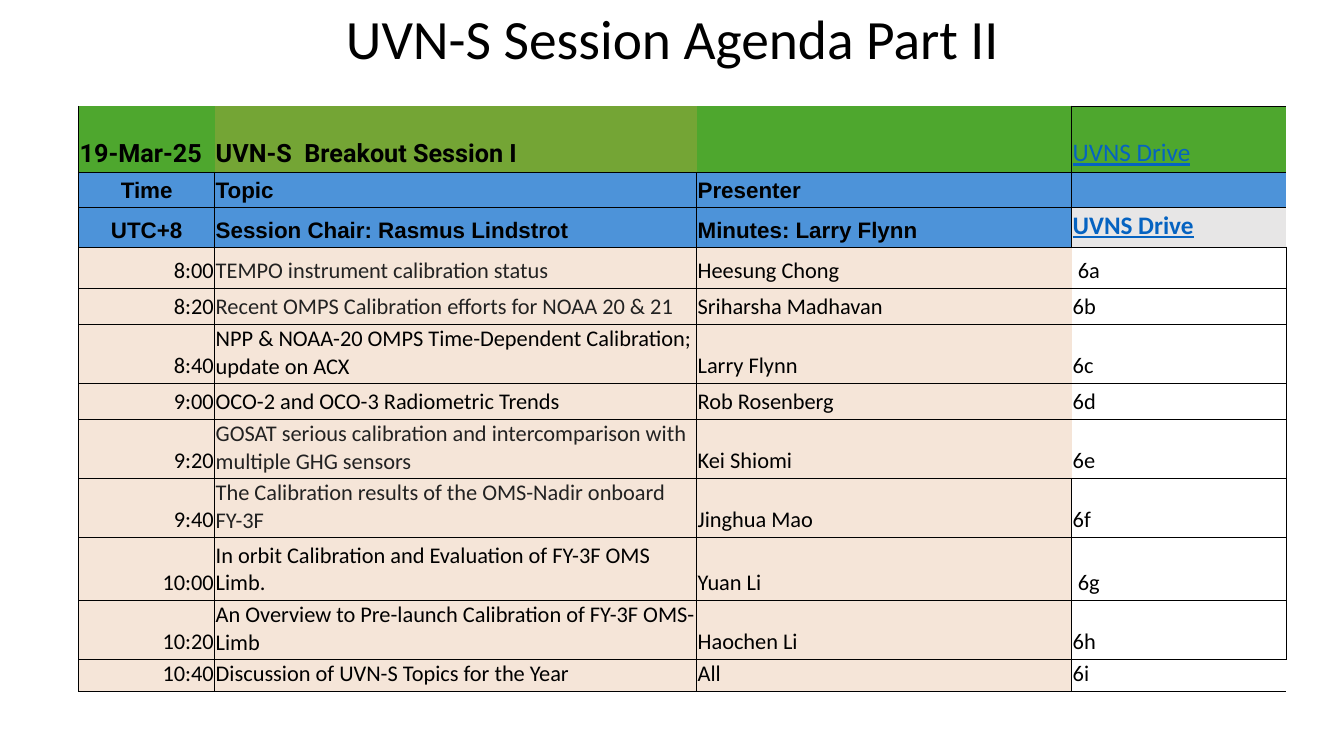
from lxml import etree
from pptx import Presentation
from pptx.dml.color import RGBColor
from pptx.enum.text import MSO_ANCHOR as Anchor, PP_ALIGN as Align
from pptx.oxml.ns import qn
from pptx.util import Inches, Pt

COLORS = {
    "black": "000000", "gray": "222222", "link": "0563C1",
    "green": "4EA72E", "olive": "74A535", "blue": "4D93D9",
    "silver": "E7E6E6", "peach": "F5E5D8",
}
COLUMN_WIDTHS = [1.35, 4.78, 3.72, 2.13]
ROW_HEIGHTS = [0.66, 0.34, 0.39, 0.41, 0.36, 0.57, 0.36, 0.53, 0.49, 0.63, 0.56, 0.32]
MARGINS = {"margin_left": 0.01, "margin_right": 0.01, "margin_top": 0.01, "margin_bottom": 0.04}

DATE = {"name": "Roboto", "size": 18, "bold": True}
HEADING = {"name": "Arial", "size": 16, "bold": True}
BODY = {"name": "Calibri", "size": 16, "bold": False}
LINK = {"name": "Calibri", "size": 18, "underline": True, "color": "link"}
GRAY_TOPIC = BODY | {"color": "gray"}

HEADER_ROWS = [
    [("19-Mar-25", DATE, "green"), ("UVN-S  Breakout Session I", DATE, "olive"),
     ("", DATE, "green"), ("UVNS Drive", LINK, "green")],
    [("Time", HEADING, "blue"), ("Topic", HEADING, "blue"),
     ("Presenter", HEADING, "blue"), ("", HEADING, "blue")],
    [("UTC+8", HEADING, "blue"), ("Session Chair: Rasmus Lindstrot", HEADING, "blue"),
     ("Minutes: Larry Flynn", HEADING, "blue"), ("UVNS Drive", LINK | {"bold": True}, "silver")],
]
TALKS = [
    ("8:00", "TEMPO instrument calibration status", "Heesung Chong", " 6a"),
    ("8:20", "Recent OMPS Calibration efforts for NOAA 20 & 21", "Sriharsha Madhavan", "6b"),
    ("8:40", "NPP & NOAA-20 OMPS Time-Dependent Calibration; update on ACX", "Larry Flynn", "6c"),
    ("9:00", "OCO-2 and OCO-3 Radiometric Trends", "Rob Rosenberg", "6d"),
    ("9:20", "GOSAT serious calibration and intercomparison with multiple GHG sensors",
     "Kei Shiomi", "6e"),
    ("9:40", "The Calibration results of the OMS-Nadir onboard FY-3F", "Jinghua Mao", "6f"),
    ("10:00", "In orbit Calibration and Evaluation of FY-3F OMS Limb.", "Yuan Li", " 6g"),
    ("10:20", "An Overview to Pre-launch Calibration of FY-3F OMS-Limb", "Haochen Li", "6h"),
    ("10:40", "Discussion of UVN-S Topics for the Year", "All", "6i"),
]
GRAY_TIMES = {"8:00", "8:20", "9:20", "9:40"}

# Cells that lack some of their four borders, by (row, column)
BORDERS = {(0, 0): "LB", (0, 1): "B", (0, 2): "RB"}
BORDERS |= {(row, 3): "LTB" for row in (0, 1, 2, 11)}
BORDERS |= {(row, 2): "LTB" for row in range(3, 8)}
BORDERS |= {(row, 3): "TRB" for row in range(3, 8)}


def add_run(paragraph, text, style):
    run = paragraph.add_run()
    run.text = text
    values = {"color": "black"} | style
    run.font.color.rgb = RGBColor.from_string(COLORS[values.pop("color")])
    values["size"] = Pt(values["size"])
    for name, value in values.items():
        setattr(run.font, name, value)


def set_borders(cell, sides):
    """Draw thin black lines on the given sides and none on the others."""
    properties = cell._tc.get_or_add_tcPr()
    for side in "LRTB":
        line = etree.SubElement(properties, qn(f"a:ln{side}"), w=str(Pt(0.5)))
        if side in sides:
            fill = etree.SubElement(line, qn("a:solidFill"))
            etree.SubElement(fill, qn("a:srgbClr"), val=COLORS["black"])
        else:
            etree.SubElement(line, qn("a:noFill"))


def fill_cell(cell, text, style, fill, align, anchor, sides):
    for name, value in MARGINS.items():
        setattr(cell, name, Inches(value))
    cell.vertical_anchor = anchor
    set_borders(cell, sides)
    if fill:
        cell.fill.solid()
        cell.fill.fore_color.rgb = RGBColor.from_string(COLORS[fill])
    else:
        cell.fill.background()
    paragraph = cell.text_frame.paragraphs[0]
    paragraph.alignment = align
    add_run(paragraph, text, style)


def talk_row(time, topic, presenter, number):
    topic_style = GRAY_TOPIC if time in GRAY_TIMES else BODY
    return [(time, BODY, "peach"), (topic, topic_style, "peach"),
            (presenter, BODY, "peach"), (number, BODY, None)]


def cell_align(row, column):
    if column > 0 or row == 0:
        return Align.LEFT
    return Align.CENTER if row < len(HEADER_ROWS) else Align.RIGHT


def add_title(slide, text):
    box = slide.shapes.add_textbox(Inches(0.92), Inches(0.12), Inches(11.5), Inches(0.59))
    frame = box.text_frame
    frame.word_wrap = True
    frame.vertical_anchor = Anchor.MIDDLE
    paragraph = frame.paragraphs[0]
    paragraph.alignment = Align.CENTER
    paragraph.line_spacing = 0.9
    add_run(paragraph, text, {"name": "Calibri", "size": 39.6})


def add_agenda(slide):
    rows = HEADER_ROWS + [talk_row(*talk) for talk in TALKS]
    table = slide.shapes.add_table(
        len(rows), len(COLUMN_WIDTHS), Inches(0.78), Inches(1.05),
        Inches(sum(COLUMN_WIDTHS)), Inches(sum(ROW_HEIGHTS))).table
    table.first_row = False
    table.horz_banding = False
    for column, width in zip(table.columns, COLUMN_WIDTHS):
        column.width = Inches(width)
    for row, height in zip(table.rows, ROW_HEIGHTS):
        row.height = Inches(height)
    for row, entries in enumerate(rows):
        for column, (text, style, fill) in enumerate(entries):
            anchor = Anchor.MIDDLE if fill == "silver" else Anchor.BOTTOM
            fill_cell(table.cell(row, column), text, style, fill, cell_align(row, column),
                      anchor, BORDERS.get((row, column), "LRTB"))


def main():
    presentation = Presentation()
    presentation.slide_width = Inches(13.33)
    presentation.slide_height = Inches(7.5)
    slide = presentation.slides.add_slide(presentation.slide_layouts[6])
    add_title(slide, "UVN-S Session Agenda Part II")
    add_agenda(slide)
    presentation.save("out.pptx")


if __name__ == "__main__":
    main()
